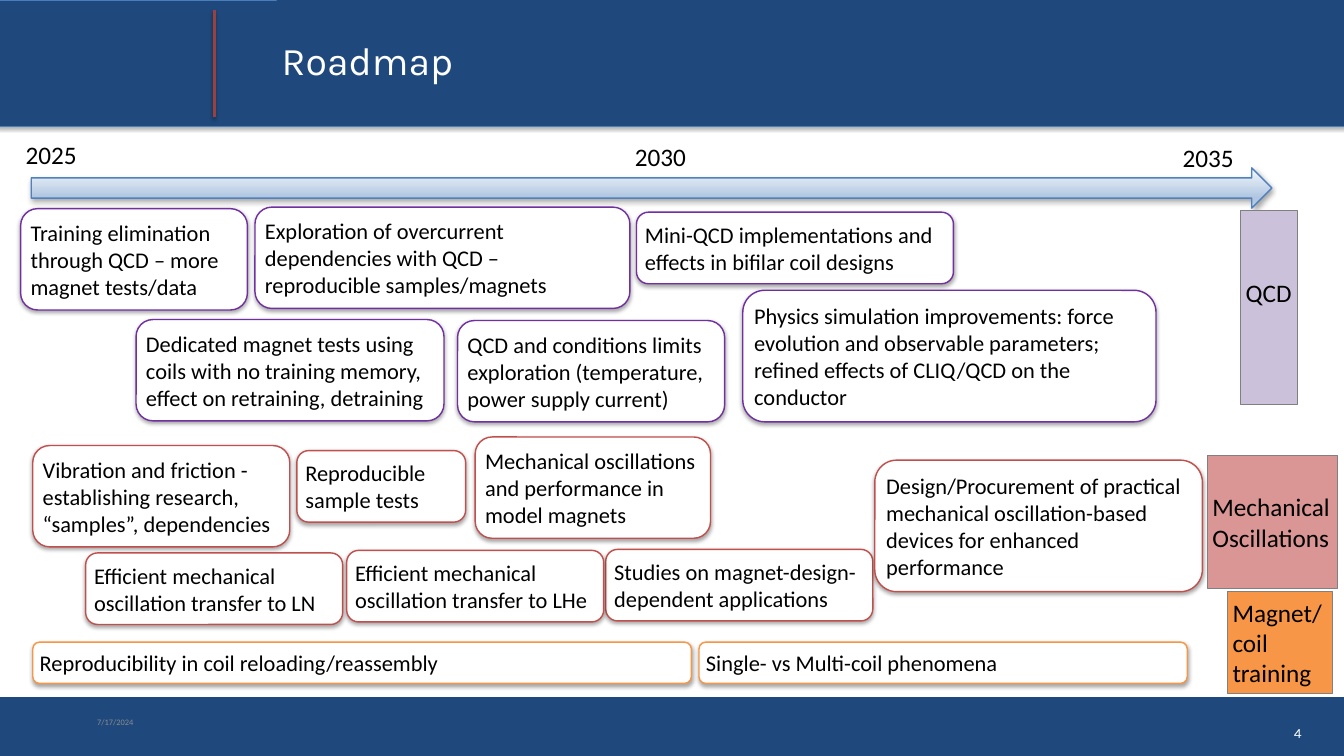
import lxml.etree
import pptx
import pptx.dml.color
import pptx.enum.shapes
import pptx.enum.text
import pptx.oxml.ns
import pptx.util

Inches = pptx.util.Inches
Pt = pptx.util.Pt
SHAPE = pptx.enum.shapes.MSO_SHAPE
ALIGN = pptx.enum.text.PP_ALIGN
ANCHOR = pptx.enum.text.MSO_ANCHOR
RGB = pptx.dml.color.RGBColor.from_string
qn = pptx.oxml.ns.qn

COLORS = {
    "navy": "1F497D", "header edge": "4A7EBB", "divider": "9A403E",
    "arrow edge": "4F81BD", "white": "FFFFFF", "black": "000000",
    "date": "8C8C8C", "label edge": "808080",
    "qcd": "7030A0", "mechanical": "C0504D", "training": "F79646",
    "qcd label": "CCC1DA", "mechanical label": "D99694",
}


def write(frame, text, size=32, font="Calibri", color="black", align=ALIGN.LEFT,
          anchor=ANCHOR.MIDDLE, wrap=True, inset=0.1, bottom=0.1):
    frame.word_wrap = wrap
    frame.auto_size = pptx.enum.text.MSO_AUTO_SIZE.NONE
    frame.vertical_anchor = anchor
    frame.margin_left = frame.margin_right = frame.margin_top = Inches(inset)
    frame.margin_bottom = Inches(bottom)
    frame.text = text
    for paragraph in frame.paragraphs:
        paragraph.alignment = align
        paragraph.font.size = Pt(size)
        paragraph.font.name = font
        paragraph.font.color.rgb = RGB(COLORS[color])


def cast_shadow(properties, opacity=35):
    effects = properties.find(qn("a:effectLst"))
    if effects is None:
        effects = lxml.etree.SubElement(properties, qn("a:effectLst"))
    shadow = lxml.etree.SubElement(effects, qn("a:outerShdw"), blurRad=str(Pt(6)),
                                   dist=str(Pt(3)), dir="5400000", rotWithShape="0")
    black = lxml.etree.SubElement(shadow, qn("a:srgbClr"), val=COLORS["black"])
    lxml.etree.SubElement(black, qn("a:alpha"), val=str(opacity * 1000))


deck = pptx.Presentation()
deck.slide_width = Inches(26.67)
deck.slide_height = Inches(15)
slide = deck.slides.add_slide(deck.slide_layouts[5])
shapes = slide.shapes

footer = shapes.add_shape(SHAPE.RECTANGLE, Inches(-0.04), Inches(13.83), Inches(26.74), Inches(1.19))
footer.shadow.inherit = False
footer.fill.solid()
footer.fill.fore_color.rgb = RGB(COLORS["navy"])
footer.line.fill.background()

header = shapes.add_shape(SHAPE.RECTANGLE, Inches(-0.07), 0, Inches(26.79), Inches(2.5))
header.shadow.inherit = False
header.fill.solid()
header.fill.fore_color.rgb = RGB(COLORS["navy"])
header.line.color.rgb = RGB(COLORS["header edge"])
header.line.width = Pt(1)
cast_shadow(header._element.spPr)

divider = shapes.add_connector(pptx.enum.shapes.MSO_CONNECTOR.STRAIGHT,
                               Inches(4.25), Inches(2.33), Inches(4.25), Inches(0.2))
divider.line.color.rgb = RGB(COLORS["divider"])
divider.line.width = Pt(4)
cast_shadow(divider._element.spPr, opacity=38)

title = shapes.title
title.left, title.top, title.width, title.height = [Inches(n) for n in (5.49, -0.03, 21.21, 2.42)]
title.fill.solid()
title.fill.fore_color.rgb = RGB(COLORS["navy"])
write(title.text_frame, "Roadmap", size=56, font="Karla", color="white")
shapes._spTree.append(title._element)

date = shapes.add_textbox(Inches(1.83), Inches(13.9), Inches(6), Inches(0.8))
write(date.text_frame, "7/17/2024", size=12, color="date", bottom=0.05)
page_number = shapes.add_textbox(Inches(25.4), Inches(14.28), Inches(0.53), Inches(0.51))
write(page_number.text_frame, "4", size=20, font="Karla", color="white", align=ALIGN.RIGHT, wrap=False)

timeline = shapes.add_shape(SHAPE.RIGHT_ARROW, Inches(0.62), Inches(3.33), Inches(24.62), Inches(0.8))
timeline.shadow.inherit = False
timeline.fill.gradient()
timeline.fill.gradient_angle = 270
stops = timeline._element.spPr.find(qn("a:gradFill")).find(qn("a:gsLst"))
for stop in list(stops):
    stops.remove(stop)
for position, shade in [(0, "F6F9FC"), (74, "B0C6E1"), (83, "B0C6E1"), (100, "CAD9EB")]:
    stop = lxml.etree.SubElement(stops, qn("a:gs"), pos=str(position * 1000))
    lxml.etree.SubElement(stop, qn("a:srgbClr"), val=shade)
timeline.line.color.rgb = RGB(COLORS["arrow edge"])
timeline.line.width = Pt(2)
cast_shadow(timeline._element.spPr)

for year, left, top in [("2025", 0.41, 2.67), ("2030", 12.5, 2.71), ("2035", 23.37, 2.73)]:
    year_label = shapes.add_textbox(Inches(left), Inches(top), Inches(1.23), Inches(0.81))
    write(year_label.text_frame, year, size=36, anchor=ANCHOR.TOP, wrap=False)

tasks = {
    "mechanical": [
        (0.65, 8.84, 5.1, 2.01, "Vibration and friction - establishing research, “samples”, dependencies"),
        (1.7, 10.97, 5.1, 1.42, "Efficient mechanical oscillation transfer to LN"),
        (9.43, 8.67, 4.67, 2.01, "Mechanical oscillations and performance in model magnets"),
        (12.02, 10.9, 5.3, 1.42, "Studies on magnet-design-dependent applications"),
        (17.36, 9.13, 6.5, 2.61, "Design/Procurement of practical mechanical oscillation-based "
                                 "devices for enhanced performance"),
        (5.89, 8.94, 3.35, 1.42, "Reproducible\nsample tests"),
        (6.88, 10.92, 5.1, 1.42, "Efficient mechanical oscillation transfer to LHe"),
    ],
    "qcd": [
        (0.41, 4.14, 4.5, 2.01, "Training elimination through QCD – more magnet tests/data"),
        (2.7, 6.34, 6.11, 2.01, "Dedicated magnet tests using coils with no training memory, "
                                "effect on retraining, detraining"),
        (5.06, 4.11, 7.44, 2.01, "Exploration of overcurrent dependencies with QCD – "
                                 "reproducible samples/magnets"),
        (14.74, 5.76, 8.2, 2.61, "Physics simulation improvements: force evolution and observable "
                                 "parameters;\nrefined effects of CLIQ/QCD on the conductor"),
        (9.08, 6.36, 5.3, 2.01, "QCD and conditions limits exploration (temperature, power supply current)"),
        (12.63, 4.21, 6.29, 1.42, "Mini-QCD implementations and effects in bifilar coil designs"),
    ],
    "training": [
        (0.65, 12.74, 13.07, 0.82, "Reproducibility in coil reloading/reassembly"),
        (13.87, 12.74, 9.69, 0.82, "Single- vs Multi-coil phenomena"),
    ],
}
for track, entries in tasks.items():
    for *place, text in entries:
        task = shapes.add_shape(SHAPE.FLOWCHART_ALTERNATE_PROCESS, *[Inches(n) for n in place])
        task.shadow.inherit = False
        task.fill.solid()
        task.fill.fore_color.rgb = RGB(COLORS["white"])
        task.line.color.rgb = RGB(COLORS[track])
        task.line.width = Pt(2)
        cast_shadow(task._element.spPr)
        write(task.text_frame, text)

track_labels = [
    ("QCD", "qcd label", (24.62, 4.18, 1.12, 3.84), False, 0.7),
    ("Mechanical Oscillations", "mechanical label", (23.96, 9.04, 2.58, 2.63), True, 0.1),
    ("Magnet/coil training", "training", (24.36, 11.74, 2.08, 2.02), True, 0.1),
]
for text, color, place, wrap, bottom in track_labels:
    track_label = shapes.add_shape(SHAPE.RECTANGLE, *[Inches(n) for n in place])
    track_label.shadow.inherit = False
    track_label.fill.solid()
    track_label.fill.fore_color.rgb = RGB(COLORS[color])
    track_label.line.color.rgb = RGB(COLORS["label edge"])
    track_label.line.width = Pt(1)
    write(track_label.text_frame, text, size=36, wrap=wrap, bottom=bottom)

deck.save("out.pptx")
